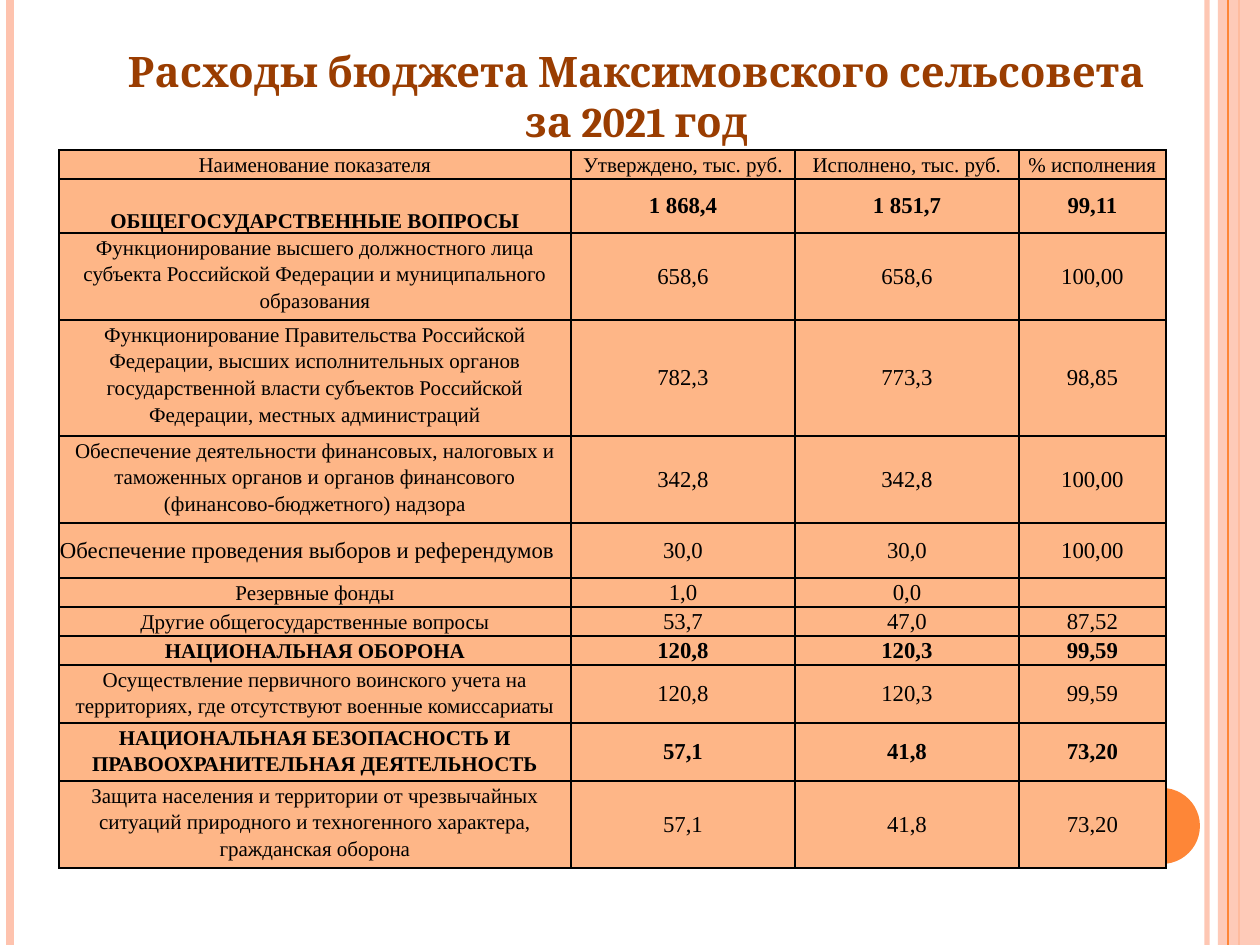
from dataclasses import dataclass

from lxml.etree import SubElement
from pptx import Presentation
from pptx.dml.color import RGBColor
from pptx.enum.shapes import MSO_CONNECTOR, MSO_SHAPE
from pptx.enum.text import MSO_ANCHOR as ANCHOR, PP_ALIGN as ALIGN
from pptx.oxml.ns import qn
from pptx.util import Emu, Pt

WIDTH, HEIGHT = 1260, 945


@dataclass(frozen=True)
class Theme:
    orange: str = "FE8637"
    peach: str = "FEC3AE"
    cell: str = "FEB687"
    title: str = "9A3D01"
    ink: str = "000000"
    title_font: str = "Cambria"
    body_font: str = "Times New Roman"
    title_size: int = 24
    name_size: int = 12
    value_size: int = 13


T = Theme()

# x, colour, width in points, opacity in percent
STRIPES_BELOW = [(1207, T.peach, 3, 93), (10, T.peach, 4.5, 100), (1239, T.orange, 1.5, 100)]
STRIPES_ABOVE = [(1228, T.orange, 0.75, 100)]

COLUMNS = [512, 224, 224, 147]
HEADER = ["Наименование показателя", "Утверждено, тыс. руб.", "Исполнено, тыс. руб.", "% исполнения"]
HEADER_HEIGHT = 29

# row height, bold, name, approved, spent, percent
ROWS = [
    (54, True, "ОБЩЕГОСУДАРСТВЕННЫЕ ВОПРОСЫ", "1 868,4", "1 851,7", "99,11"),
    (87, False, "Функционирование высшего должностного лица субъекта Российской Федерации "
     "и муниципального образования", "658,6", "658,6", "100,00"),
    (116, False, "Функционирование Правительства Российской Федерации, высших исполнительных "
     "органов государственной власти субъектов Российской Федерации, местных администраций",
     "782,3", "773,3", "98,85"),
    (87, False, "Обеспечение деятельности финансовых, налоговых и таможенных органов и органов "
     "финансового (финансово-бюджетного) надзора", "342,8", "342,8", "100,00"),
    (55, False, "Обеспечение проведения выборов и референдумов", "30,0", "30,0", "100,00"),
    (29, False, "Резервные фонды", "1,0", "0,0", ""),
    (29, False, "Другие общегосударственные вопросы", "53,7", "47,0", "87,52"),
    (29, True, "НАЦИОНАЛЬНАЯ ОБОРОНА", "120,8", "120,3", "99,59"),
    (58, False, "Осуществление первичного воинского учета на территориях, где отсутствуют "
     "военные комиссариаты", "120,8", "120,3", "99,59"),
    (58, True, "НАЦИОНАЛЬНАЯ БЕЗОПАСНОСТЬ И ПРАВООХРАНИТЕЛЬНАЯ ДЕЯТЕЛЬНОСТЬ", "57,1", "41,8", "73,20"),
    (87, False, "Защита населения и территории от чрезвычайных ситуаций природного и техногенного "
     "характера, гражданская оборона", "57,1", "41,8", "73,20"),
]
TOTALS_ROW, ELECTIONS_ROW = 1, 5


def px(n):
    return Emu(round(n * 914400 / 126))


def rgb(color):
    return RGBColor.from_string(color)


def set_opacity(fill, percent):
    if percent < 100:
        color = fill._xPr.find(qn("a:solidFill"))[0]
        SubElement(color, qn("a:alpha")).set("val", str(percent * 1000))


def write(tf, text, size, font=T.body_font, color=T.ink, bold=False, align=ALIGN.CENTER, spacing=None):
    tf.word_wrap = True
    p = tf.paragraphs[0]
    p.alignment = align
    if spacing:
        p.line_spacing = spacing
    if not text:
        # An empty cell still needs a type size, or its row grows
        p._p.get_or_add_endParaRPr().set("sz", str(size * 100))
        return
    r = p.add_run()
    r.text = text
    r.font.name, r.font.size, r.font.bold = font, Pt(size), bold
    r.font.color.rgb = rgb(color)


def add_stripe(slide, x, color, width, opacity):
    s = slide.shapes.add_connector(MSO_CONNECTOR.STRAIGHT, px(x), 0, px(x), px(HEIGHT))
    s.line.color.rgb = rgb(color)
    s.line.width = Pt(width)
    set_opacity(s.line.fill, opacity)
    SubElement(s._element.spPr, qn("a:effectLst"))


def add_solid(slide, kind, x, y, w, h, color, opacity=100):
    s = slide.shapes.add_shape(kind, px(x), px(y), px(w), px(h))
    s.shadow.inherit = False
    s.fill.solid()
    s.fill.fore_color.rgb = rgb(color)
    set_opacity(s.fill, opacity)
    s.line.fill.background()


def add_title(slide, text):
    box = slide.shapes.add_textbox(px(108), px(39), px(1057), px(165))
    write(box.text_frame, text, T.title_size, font=T.title_font, color=T.title, bold=True)


def style_cell(cell, inset, anchor):
    cell.margin_left = cell.margin_right = px(inset)
    cell.margin_top = cell.margin_bottom = 0
    cell.vertical_anchor = anchor
    # Borders come before the fill in a:tcPr
    tc_pr = cell._tc.get_or_add_tcPr()
    for side in ("a:lnL", "a:lnR", "a:lnT", "a:lnB"):
        ln = SubElement(tc_pr, qn(side), w=str(Pt(1)))
        SubElement(SubElement(ln, qn("a:solidFill")), qn("a:srgbClr")).set("val", T.ink)
    cell.fill.solid()
    cell.fill.fore_color.rgb = rgb(T.cell)


def fill_name(cell, text, bold=False, anchor=ANCHOR.TOP):
    style_cell(cell, 2, anchor)
    write(cell.text_frame, text, T.name_size, bold=bold, spacing=1.15)


def fill_value(cell, text, bold=False, align=ALIGN.CENTER):
    style_cell(cell, 1, ANCHOR.MIDDLE)
    write(cell.text_frame, text, T.value_size, bold=bold, align=align)


def add_budget_table(slide, x, y):
    heights = [HEADER_HEIGHT] + [row[0] for row in ROWS]
    frame = slide.shapes.add_table(len(heights), len(COLUMNS), px(x), px(y),
                                   px(sum(COLUMNS)), px(sum(heights)))
    table = frame.table
    for column, width in zip(table.columns, COLUMNS):
        column.width = px(width)
    for row, height in zip(table.rows, heights):
        row.height = px(height)

    for i, text in enumerate(HEADER):
        fill_name(table.cell(0, i), text)
    for i, (_, bold, name, *values) in enumerate(ROWS, 1):
        if i == ELECTIONS_ROW:
            fill_value(table.cell(i, 0), name, align=ALIGN.LEFT)
        else:
            fill_name(table.cell(i, 0), name, bold, ANCHOR.BOTTOM if i == TOTALS_ROW else ANCHOR.TOP)
        for j, value in enumerate(values, 1):
            fill_value(table.cell(i, j), value, bold)


def main():
    prs = Presentation()
    prs.slide_width, prs.slide_height = px(WIDTH), px(HEIGHT)
    slide = prs.slides.add_slide(prs.slide_layouts[6])

    # Side stripes and disc
    for stripe in STRIPES_BELOW:
        add_stripe(slide, *stripe)
    add_solid(slide, MSO_SHAPE.RECTANGLE, 1218, 0, 42, HEIGHT, T.peach, 87)
    for stripe in STRIPES_ABOVE:
        add_stripe(slide, *stripe)
    add_solid(slide, MSO_SHAPE.OVAL, 1124, 788, 76, 76, T.orange)

    # Title and budget
    add_title(slide, "Расходы бюджета Максимовского сельсовета за 2021 год")
    add_budget_table(slide, 59, 150)
    prs.save("out.pptx")


if __name__ == "__main__":
    main()
